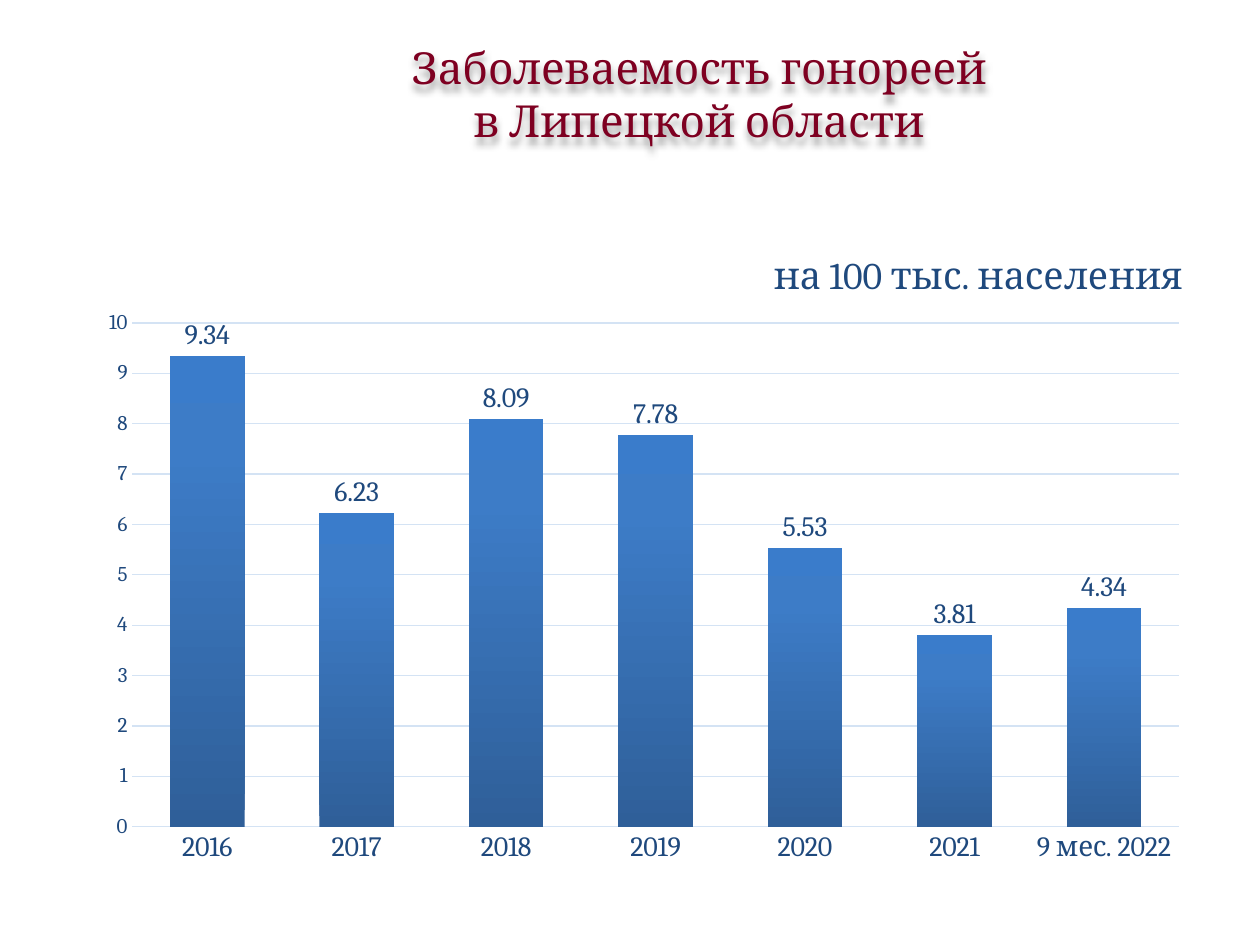
"""Build a slide with a column chart of yearly incidence rates."""
from lxml import etree
from pptx import Presentation
from pptx import util as u
from pptx.chart import data as chart_data
from pptx.dml.color import RGBColor
from pptx.enum import chart as ch, text
from pptx.oxml import parse_xml
from pptx.oxml.ns import nsdecls, qn

PX = 914400 / 126
NAVY, PALE, WINE = "1F497D", "D4E3F4", "7E0021"
RATES = {"2016": 9.34, "2017": 6.23, "2018": 8.09, "2019": 7.78,
         "2020": 5.53, "2021": 3.81, "9 мес. 2022": 4.34}


def rgb(value):
    return RGBColor.from_string(value)


def style(font, size, color):
    formats = {"name": "Cambria", "size": u.Pt(size), "bold": False}
    for key, value in formats.items():
        setattr(font, key, value)
    font.color.rgb = rgb(color)


deck = Presentation()
deck.slide_width, deck.slide_height = u.Inches(10), u.Inches(7.5)
slide = deck.slides.add_slide(deck.slide_layouts[5])

heading = slide.shapes.title
for side, px in {"left": 69, "top": 35, "width": 1260, "height": 116}.items():
    setattr(heading, side, round(px * PX))
frame = heading.text_frame
frame.text = "Заболеваемость гонореей\vв Липецкой области"
frame.auto_size = text.MSO_AUTO_SIZE.NONE
frame.vertical_anchor = text.MSO_ANCHOR.MIDDLE
frame.paragraphs[0].alignment = text.PP_ALIGN.CENTER
for run in frame.paragraphs[0].runs:
    style(run.font, 25.2, WINE)
heading._element.spPr.append(parse_xml(
    f'<a:effectLst {nsdecls("a")}><a:outerShdw blurRad="50800" dist="50800" dir="5400000">'
    '<a:srgbClr val="000000"><a:alpha val="40000"/></a:srgbClr></a:outerShdw></a:effectLst>'))

rates = chart_data.CategoryChartData(number_format="General")
rates.categories = list(RATES)
rates.add_series("Series 1", list(RATES.values()))
box = [round(px * PX) for px in (88, 217, 1113, 663)]
chart = slide.shapes.add_chart(ch.XL_CHART_TYPE.COLUMN_CLUSTERED, *box, rates).chart
chart.has_legend = False
chart.font.name, chart.font.size = "Calibri", u.Pt(10)

chart.has_title = True
unit = chart.chart_title.text_frame
unit.text = "на 100 тыс. населения"
style(unit.paragraphs[0].runs[0].font, 21.6, NAVY)
chart.chart_title.include_in_layout = False

plot = chart.plots[0]
for key, value in {"gap_width": 100, "overlap": -24, "vary_by_categories": False,
                   "has_data_labels": True}.items():
    setattr(plot, key, value)
labels = plot.data_labels
labels.show_value = True
labels.position = ch.XL_LABEL_POSITION.OUTSIDE_END
style(labels.font, 16, NAVY)

for axis, size in ((chart.category_axis, 16), (chart.value_axis, 12)):
    axis.major_tick_mark = axis.minor_tick_mark = ch.XL_TICK_MARK.NONE
    style(axis.tick_labels.font, size, NAVY)
scale = chart.value_axis
for key, value in {"minimum_scale": 0, "maximum_scale": 10, "major_unit": 1}.items():
    setattr(scale, key, value)
scale.format.line.fill.background()
for line in (chart.category_axis.format.line, scale.major_gridlines.format.line):
    line.color.rgb = rgb(PALE)
    line.width = u.Pt(0.75)

stops = "".join(f'<a:gs pos="{pos * 1000}"><a:srgbClr val="{color}"/></a:gs>'
                for pos, color in ((0, "2F5F99"), (80, "3D7CC7"), (100, "3A7CCB")))
columns = plot.series[0]
columns.invert_if_negative = False
columns._element.get_or_add_spPr().append(parse_xml(
    f'<a:gradFill {nsdecls("a")} rotWithShape="1"><a:gsLst>{stops}</a:gsLst>'
    '<a:lin ang="16200000" scaled="0"/></a:gradFill>'))

title_place = {"xMode": "edge", "yMode": "edge", "x": 0.61, "y": 0.04}
plot_place = {"layoutTarget": "inner", "xMode": "edge", "yMode": "edge",
              "x": 0.04, "y": 0.16, "w": 0.94, "h": 0.76}
title_xml = chart.chart_title._element
plot_xml = chart._chartSpace.chart.plotArea
for parent, index, place in ((title_xml, 1, title_place), (plot_xml, 0, plot_place)):
    for old in parent.findall(qn("c:layout")):
        parent.remove(old)
    layout = parse_xml(f'<c:layout {nsdecls("c")}/>')
    manual = etree.SubElement(layout, qn("c:manualLayout"))
    for key, value in place.items():
        etree.SubElement(manual, qn(f"c:{key}")).set("val", str(value))
    parent.insert(index, layout)

deck.save("out.pptx")
